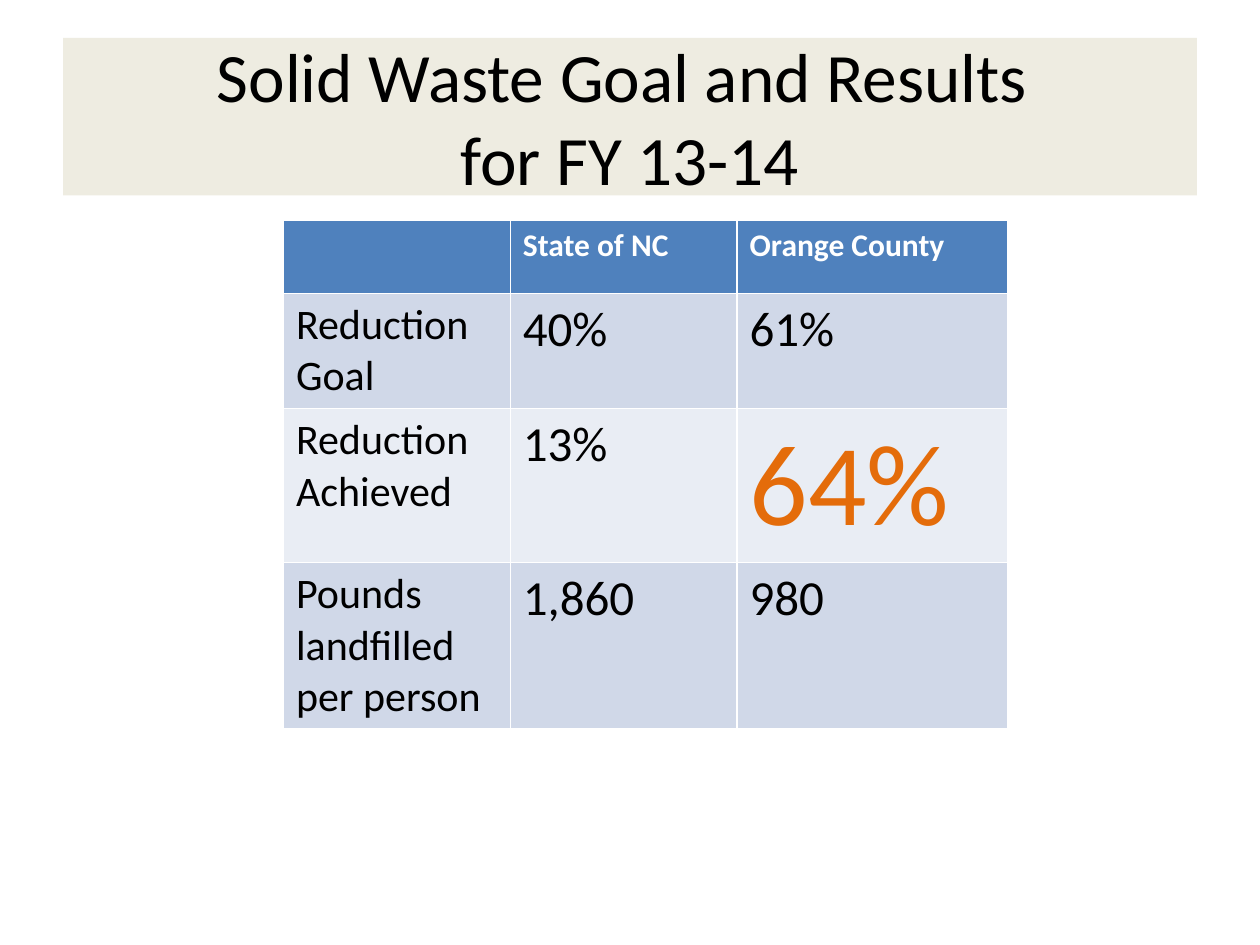
from pptx import Presentation
from pptx.dml.color import RGBColor
from pptx.enum.text import MSO_ANCHOR, MSO_AUTO_SIZE, PP_ALIGN
from pptx.util import Pt

CENTER = PP_ALIGN.CENTER
MIDDLE = MSO_ANCHOR.MIDDLE
NO_AUTOFIT = MSO_AUTO_SIZE.NONE
TITLE_ONLY = 5

HEADING = "Solid Waste Goal and Results \vfor FY 13-14"
RESULTS = [
    ("", "State of NC", "Orange County"),
    ("Reduction Goal", "40%", "61%"),
    ("Reduction Achieved", "13%", "64%"),
    ("Pounds landfilled per person", "1,860", "980"),
]
HIGHLIGHT = (2, 2)

COLUMN_WIDTHS = (129.6, 129.6, 154.8)
ROW_HEIGHTS = (41.76, 65.5, 88, 95)

THEME = {
    "font": "Calibri",
    "title_fill": "EEECE1",
    "header_fill": "4F81BD",
    "bands": ("E9EDF4", "D0D8E8"),
    "text": "000000",
    "header_text": "FFFFFF",
    "accent": "E46C0A",
    "title_size": 39.6,
    "header_size": 18,
    "label_size": 24,
    "value_size": 28,
    "highlight_size": 66,
}


def color(name):
    return RGBColor.from_string(name)


def style(font, size, text_color, bold=False):
    font.name = THEME["font"]
    font.size = Pt(size)
    font.bold = bold
    font.color.rgb = color(text_color)


def cell_look(row, column):
    if row == 0:
        return THEME["header_fill"], THEME["header_size"], THEME["header_text"]
    band = THEME["bands"][row % 2]
    if (row, column) == HIGHLIGHT:
        return band, THEME["highlight_size"], THEME["accent"]
    size = THEME["label_size"] if column == 0 else THEME["value_size"]
    return band, size, THEME["text"]


def add_heading(slide):
    heading = slide.shapes.title
    heading.left, heading.top = Pt(36), Pt(21.6)
    heading.width, heading.height = Pt(648), Pt(90)
    heading.fill.solid()
    heading.fill.fore_color.rgb = color(THEME["title_fill"])
    frame = heading.text_frame
    frame.text = HEADING
    frame.auto_size = NO_AUTOFIT
    frame.vertical_anchor = MIDDLE
    paragraph = frame.paragraphs[0]
    paragraph.alignment = CENTER
    style(paragraph.font, THEME["title_size"], THEME["text"])


def add_results(slide):
    results = slide.shapes.add_table(
        len(RESULTS), len(COLUMN_WIDTHS), Pt(162), Pt(126),
        Pt(sum(COLUMN_WIDTHS)), Pt(sum(ROW_HEIGHTS)),
    ).table
    for column, width in zip(results.columns, COLUMN_WIDTHS):
        column.width = Pt(width)
    for r, (entries, height) in enumerate(zip(RESULTS, ROW_HEIGHTS)):
        results.rows[r].height = Pt(height)
        for c, entry in enumerate(entries):
            fill, size, text_color = cell_look(r, c)
            cell = results.cell(r, c)
            cell.text = entry
            cell.fill.solid()
            cell.fill.fore_color.rgb = color(fill)
            style(cell.text_frame.paragraphs[0].font, size, text_color, r == 0)


def main():
    deck = Presentation()
    deck.slide_width, deck.slide_height = Pt(720), Pt(540)
    slide = deck.slides.add_slide(deck.slide_layouts[TITLE_ONLY])
    add_heading(slide)
    add_results(slide)
    deck.save("out.pptx")


if __name__ == "__main__":
    main()
